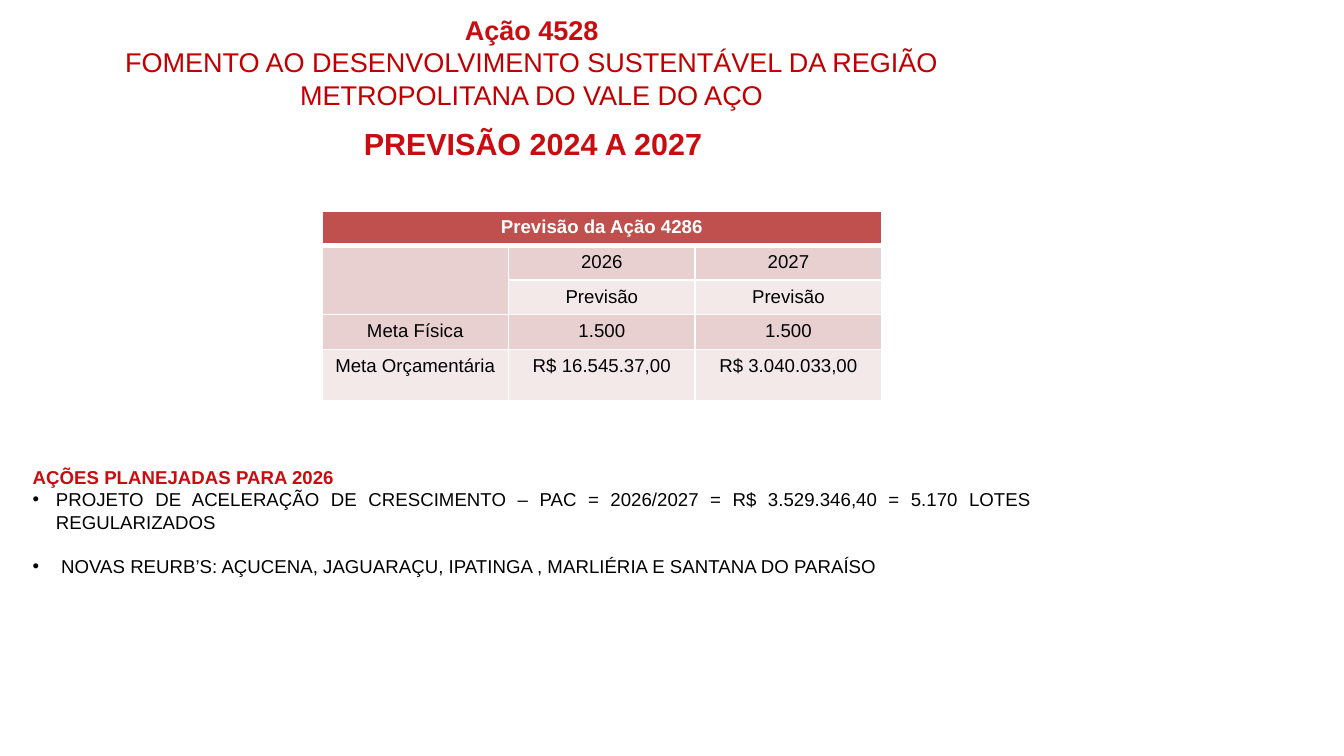
from lxml import etree
from pptx import Presentation
from pptx.dml.color import RGBColor
from pptx.enum import text as text_enum
from pptx.oxml import ns
from pptx.util import Inches, Pt

COLORS = {
    "red": "C90C10",
    "dark_red": "C00000",
    "black": "000000",
    "white": "FFFFFF",
    "header": "C0504D",
    "band_dark": "E8D0D0",
    "band_light": "F4E9E9",
}
FONT = "Arial"
CENTER = text_enum.PP_ALIGN.CENTER
JUSTIFY = text_enum.PP_ALIGN.JUSTIFY

FORECAST = [
    ["Previsão da Ação 4286", "", ""],
    ["", "2026", "2027"],
    ["", "Previsão", "Previsão"],
    ["Meta Física", "1.500", "1.500"],
    ["Meta Orçamentária", "R$ 16.545.37,00", "R$ 3.040.033,00"],
]
ROW_HEIGHTS = [0.27, 0.27, 0.27, 0.27, 0.42]
COLUMN_WIDTH = 1.53
PLANNED_ACTIONS = [
    ("PROJETO DE ACELERAÇÃO DE CRESCIMENTO – PAC = 2026/2027 = "
     "R$ 3.529.346,40 = 5.170 LOTES REGULARIZADOS", 0),
    (" NOVAS REURB’S: AÇUCENA, JAGUARAÇU, IPATINGA , MARLIÉRIA "
     "E SANTANA DO PARAÍSO", 13),
]


def add_run(paragraph, content, size, color, bold=False):
    run = paragraph.add_run()
    run.text = content
    run.font.name = FONT
    run.font.size = Pt(size)
    run.font.bold = bold
    run.font.color.rgb = RGBColor.from_string(COLORS[color])


def add_text_box(slide, left, top, width, height, lines, alignment):
    shape = slide.shapes.add_textbox(Inches(left), Inches(top), Inches(width), Inches(height))
    frame = shape.text_frame
    frame.word_wrap = True
    for index, line in enumerate(lines):
        paragraph = frame.paragraphs[0] if index == 0 else frame.add_paragraph()
        paragraph.alignment = alignment
        add_run(paragraph, *line)
    return frame


def add_bullet(frame, content, space_before):
    paragraph = frame.add_paragraph()
    paragraph.alignment = JUSTIFY
    paragraph.space_before = Pt(space_before)
    properties = paragraph._p.get_or_add_pPr()
    properties.set("marL", str(Inches(0.19)))
    properties.set("indent", str(-Inches(0.19)))
    etree.SubElement(properties, ns.qn("a:buFont"), typeface=FONT)
    etree.SubElement(properties, ns.qn("a:buChar"), char="•")
    add_run(paragraph, content, 11, "black")


def add_borders(cell, bottom_width, top_width):
    properties = cell._tc.get_or_add_tcPr()
    widths = {"lnL": 1, "lnR": 1, "lnT": top_width, "lnB": bottom_width}
    for position, (side, width) in enumerate(widths.items()):
        line = etree.Element(ns.qn(f"a:{side}"), w=str(Pt(width)))
        fill = etree.SubElement(line, ns.qn("a:solidFill"))
        etree.SubElement(fill, ns.qn("a:srgbClr"), val=COLORS["white"])
        properties.insert(position, line)


def style_cell(cell, content, row):
    is_header = row == 0
    label_color = "white" if is_header else "black"
    band = "band_dark" if row % 2 else "band_light"
    paragraph = cell.text_frame.paragraphs[0]
    paragraph.alignment = CENTER
    add_run(paragraph, content, 11, label_color, is_header)
    cell.fill.solid()
    cell.fill.fore_color.rgb = RGBColor.from_string(COLORS["header" if is_header else band])
    add_borders(cell, 3 if is_header else 1, 3 if row == 1 else 1)


def add_forecast_table(slide, left, top):
    row_count, column_count = len(FORECAST), len(FORECAST[0])
    table = slide.shapes.add_table(
        row_count, column_count, Inches(left), Inches(top),
        Inches(COLUMN_WIDTH * column_count), Inches(sum(ROW_HEIGHTS)),
    ).table
    for column in table.columns:
        column.width = Inches(COLUMN_WIDTH)
    for row, values in enumerate(FORECAST):
        table.rows[row].height = Inches(ROW_HEIGHTS[row])
        for column, content in enumerate(values):
            style_cell(table.cell(row, column), content, row)
    table.cell(0, 0).merge(table.cell(0, 2))
    table.cell(1, 0).merge(table.cell(2, 0))


def add_planned_actions(slide):
    heading = [("AÇÕES PLANEJADAS PARA 2026", 11, "red", True)]
    frame = add_text_box(slide, 0.17, 3.59, 8.39, 1.4, heading, JUSTIFY)
    frame.margin_top = Inches(0.23)
    for content, space_before in PLANNED_ACTIONS:
        add_bullet(frame, content, space_before)


def main():
    presentation = Presentation()
    presentation.slide_width = Inches(11.02)
    presentation.slide_height = Inches(6.2)
    slide = presentation.slides.add_slide(presentation.slide_layouts[6])
    add_planned_actions(slide)
    add_text_box(slide, 0.02, 0.06, 8.68, 0.91, [
        ("Ação 4528", 16, "red", True),
        ("FOMENTO AO DESENVOLVIMENTO SUSTENTÁVEL DA REGIÃO "
         "METROPOLITANA DO VALE DO AÇO", 16, "dark_red"),
    ], CENTER)
    add_forecast_table(slide, 2.64, 1.73)
    add_text_box(slide, 0.03, 0.98, 8.68, 0.4,
                 [("PREVISÃO 2024 A 2027", 18, "red", True)], CENTER)
    presentation.save("out.pptx")


if __name__ == "__main__":
    main()
